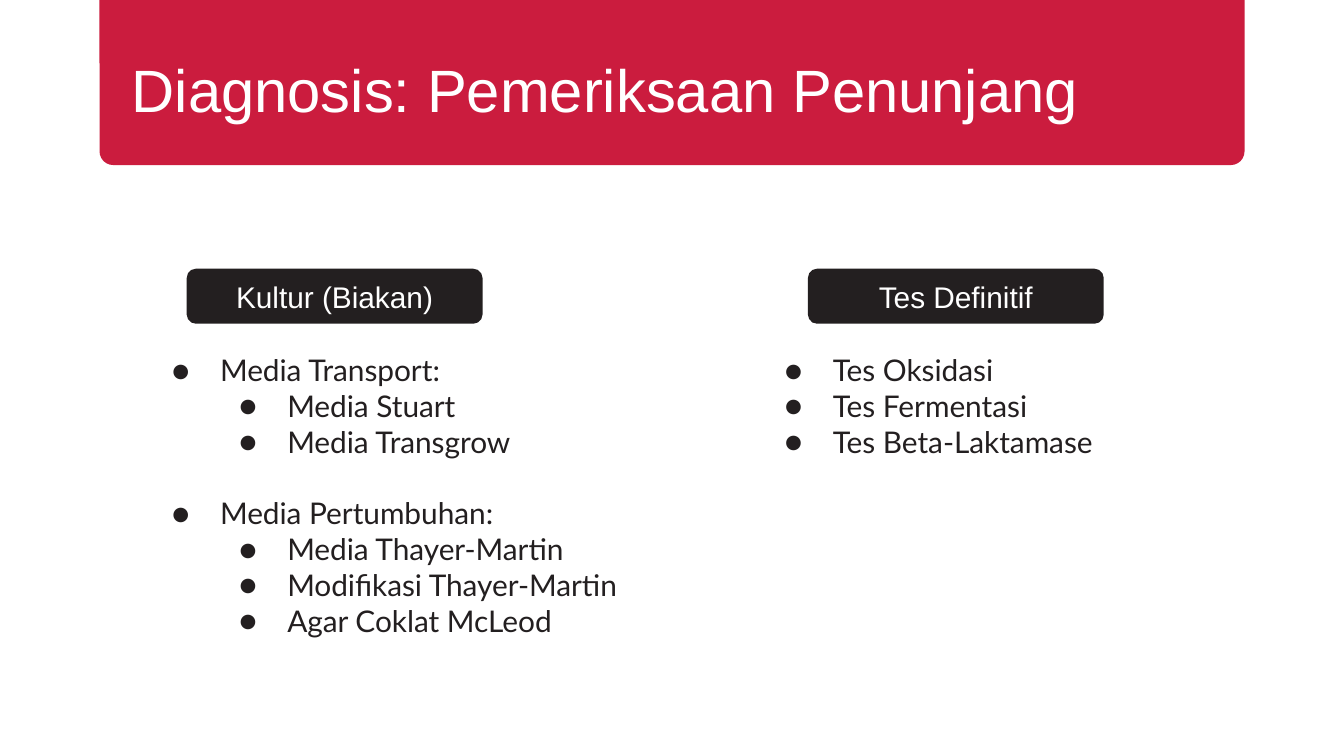
from lxml.etree import SubElement
from pptx import Presentation
from pptx.dml.color import RGBColor
from pptx.enum.shapes import MSO_SHAPE as Shape
from pptx.enum.text import MSO_ANCHOR as Anchor, PP_ALIGN as Align
from pptx.oxml.ns import qn
from pptx.util import Cm, Pt

RED = RGBColor(0xCB, 0x1C, 0x3E)
BLACK = RGBColor(0x23, 0x1F, 0x20)
WHITE = RGBColor(0xFF, 0xFF, 0xFF)

INSET = 0.25
INDENT = 1.27
HANGING = 0.91
LINE_GAP = 19.2

CULTURE_ITEMS = [
    ("Media Transport:", 0),
    ("Media Stuart", 1),
    ("Media Transgrow", 1),
    ("Media Pertumbuhan:", 0),
    ("Media Thayer-Martin", 1),
    ("Modifikasi Thayer-Martin", 1),
    ("Agar Coklat McLeod", 1),
]
DEFINITIVE_ITEMS = [
    ("Tes Oksidasi", 0),
    ("Tes Fermentasi", 0),
    ("Tes Beta-Laktamase", 0),
]


def add_filled_shape(slide, kind, box, color, adjustment):
    shape = slide.shapes.add_shape(kind, *map(Cm, box))
    shape.shadow.inherit = False
    shape.fill.solid()
    shape.fill.fore_color.rgb = color
    shape.line.fill.background()
    shape.adjustments[0] = adjustment
    return shape


def set_up_frame(frame, anchor, vertical_inset=INSET):
    frame.word_wrap = True
    frame.vertical_anchor = anchor
    frame.margin_left = frame.margin_right = Cm(INSET)
    frame.margin_top = frame.margin_bottom = Cm(vertical_inset)


def write(paragraph, text, size=16, font="Arial", color=WHITE, align=Align.LEFT):
    paragraph.alignment = align
    run = paragraph.add_run()
    run.text = text
    run.font.size = Pt(size)
    run.font.name = font
    run.font.color.rgb = color


def add_bullet(paragraph, level):
    paragraph.level = level
    properties = paragraph._p.get_or_add_pPr()
    properties.set("marL", str(Cm(INDENT * (level + 1))))
    properties.set("indent", str(-Cm(HANGING)))
    bullet_color = SubElement(properties, qn("a:buClr"))
    SubElement(bullet_color, qn("a:srgbClr"), val=str(BLACK))
    SubElement(properties, qn("a:buFont"), typeface="Lato")
    SubElement(properties, qn("a:buChar"), char="●")


def add_title_banner(slide, box, title):
    left, top, width, height = box
    banner = add_filled_shape(slide, Shape.ROUND_2_SAME_RECTANGLE, box, RED, 0.081)
    banner.rotation = 180
    title_box = slide.shapes.add_textbox(
        Cm(left + 0.36), Cm(top + 0.82), Cm(width), Cm(1.6))
    set_up_frame(title_box.text_frame, Anchor.TOP)
    write(title_box.text_frame.paragraphs[0], title, size=32)


def add_heading(slide, box, text):
    pill = add_filled_shape(slide, Shape.ROUNDED_RECTANGLE, box, BLACK, 0.167)
    set_up_frame(pill.text_frame, Anchor.MIDDLE, vertical_inset=0)
    write(pill.text_frame.paragraphs[0], text, align=Align.CENTER)


def add_bullet_list(slide, box, items, anchor):
    """Write (text, level) items, with a line's gap before each new group."""
    frame = slide.shapes.add_textbox(*map(Cm, box)).text_frame
    set_up_frame(frame, anchor, vertical_inset=0)
    previous_level = 0
    for index, (text, level) in enumerate(items):
        paragraph = frame.add_paragraph() if index else frame.paragraphs[0]
        add_bullet(paragraph, level)
        if level < previous_level:
            paragraph.space_before = Pt(LINE_GAP)
        write(paragraph, text, font="Lato", color=BLACK)
        previous_level = level


def main():
    presentation = Presentation()
    presentation.slide_width = Cm(25.4)
    presentation.slide_height = Cm(14.29)
    slide = presentation.slides.add_slide(presentation.slide_layouts[6])

    add_title_banner(slide, (1.88, -0.08, 21.64, 3.2),
                     "Diagnosis: Pemeriksaan Penunjang")
    add_bullet_list(slide, (2.64, 6.65, 9.35, 6.12), CULTURE_ITEMS, Anchor.TOP)
    add_bullet_list(slide, (14.22, 6.05, 9.35, 3.23), DEFINITIVE_ITEMS, Anchor.MIDDLE)
    add_heading(slide, (3.53, 5.08, 5.59, 1.04), "Kultur (Biakan)")
    add_heading(slide, (15.27, 5.08, 5.59, 1.04), "Tes Definitif")

    presentation.save("out.pptx")


if __name__ == "__main__":
    main()
